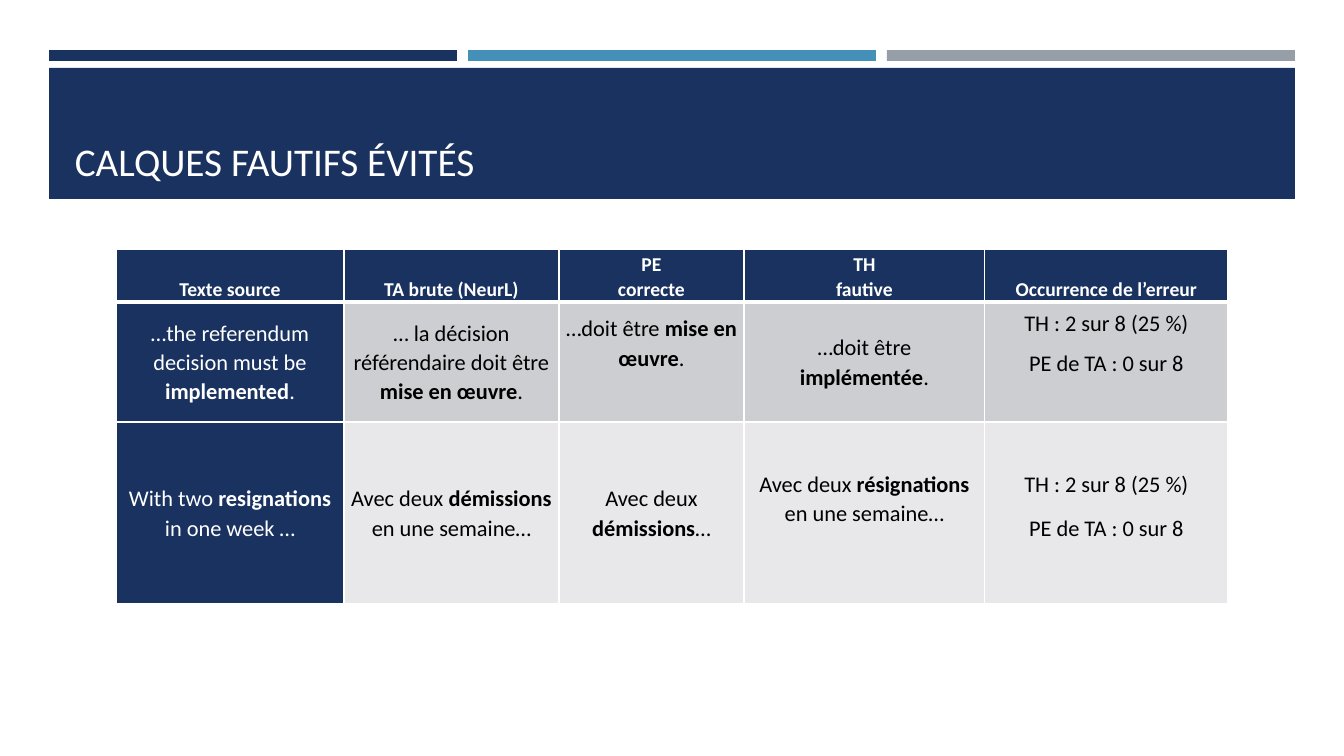
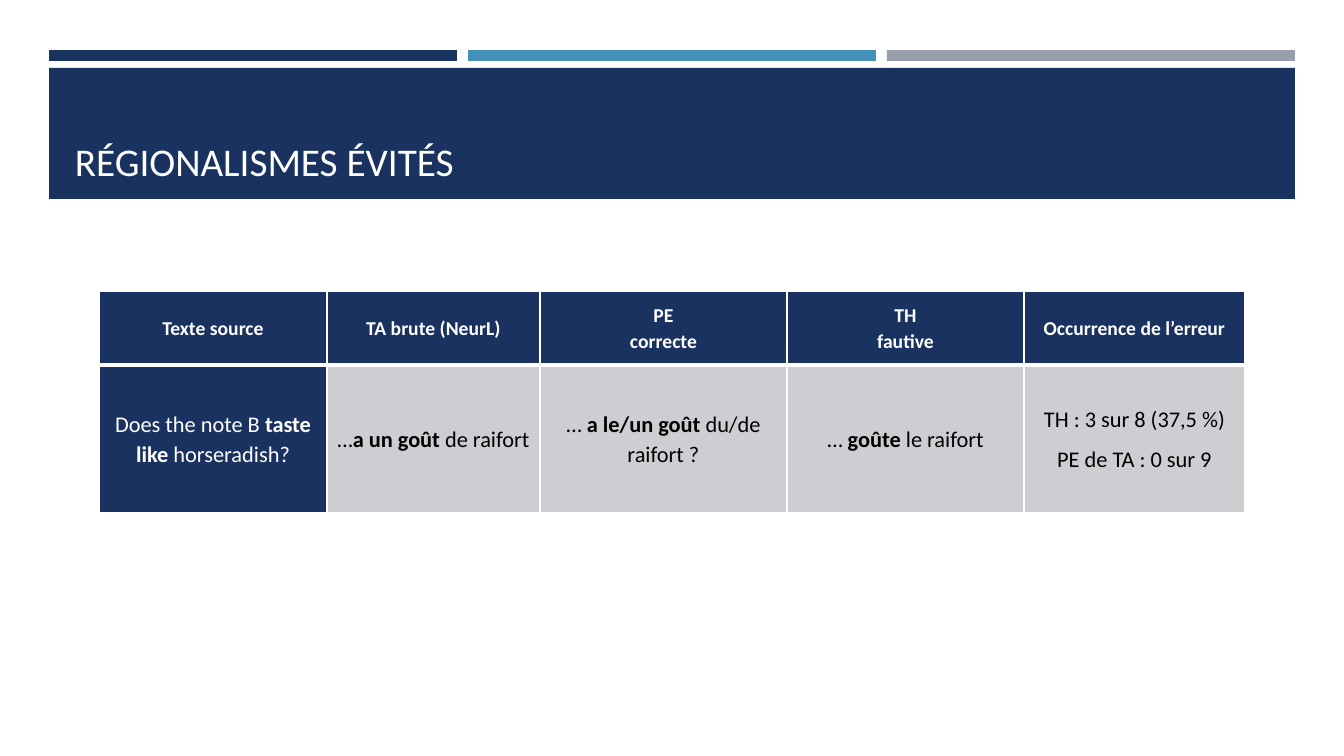
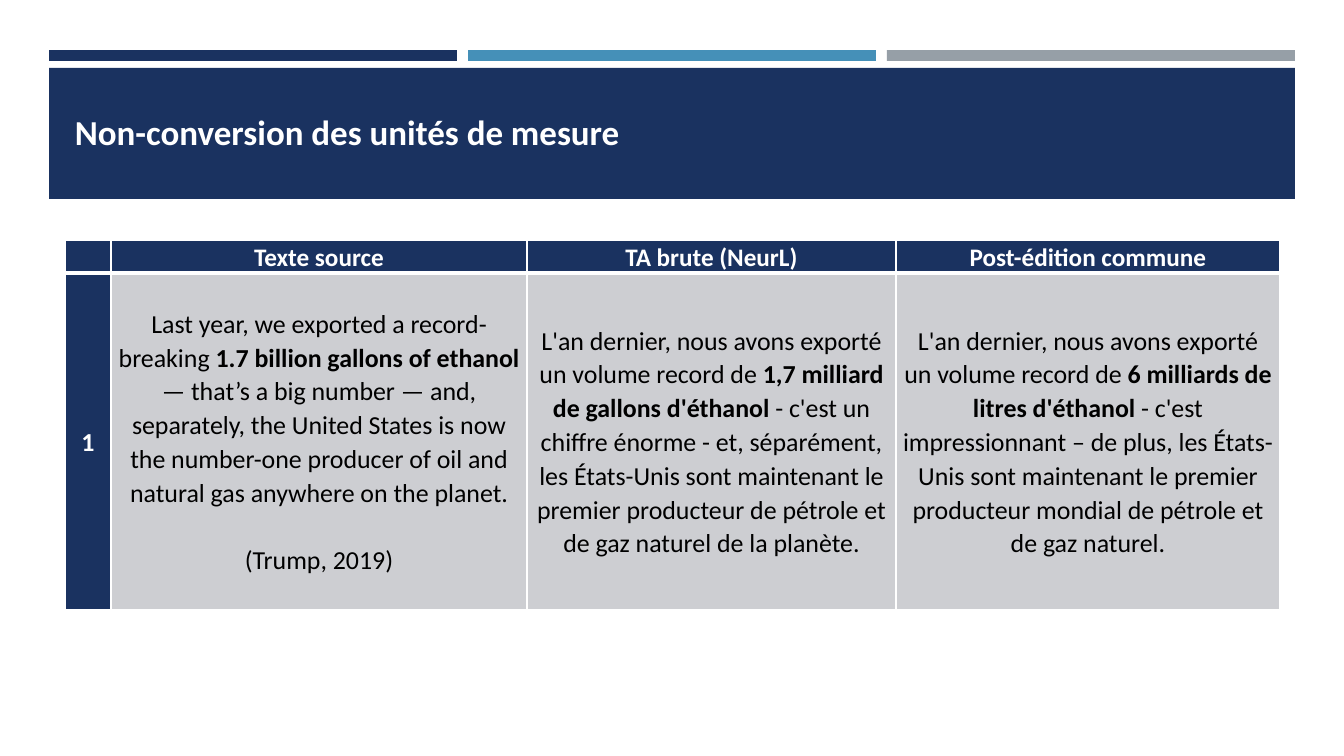
import pptx
import pptx.util
import pptx.dml.color
import pptx.enum.shapes
import pptx.enum.text
import pptx.oxml
import pptx.oxml.ns

RGB = pptx.dml.color.RGBColor
NAVY = RGB(0x1A, 0x32, 0x60)
BLUE = RGB(0x45, 0x90, 0xB8)
GRAY = RGB(0x96, 0x9F, 0xA7)
DARK = RGB(0xCD, 0xCE, 0xD2)
PALE = RGB(0xE8, 0xE8, 0xEA)
WHITE = RGB(0xFF, 0xFF, 0xFF)
BLACK = RGB(0, 0, 0)
FACE = "Calibri"
SCALE = 914400 / 100.8
PT = pptx.util.Pt
ANCHOR = pptx.enum.text.MSO_ANCHOR
ALIGN = pptx.enum.text.PP_ALIGN


def px(size):
    return round(size * SCALE)


def put(item, values):
    for name, value in values.items():
        setattr(item, name, value)


def write(para, text, size, color, bold=False):
    for part, words in enumerate(text.split("*")):
        if words:
            run = para.add_run()
            run.text = words
            put(run.font, {"name": FACE, "size": PT(size), "bold": bold or part % 2 == 1})
            run.font.color.rgb = color


def block(slide, box, color):
    shape = slide.shapes.add_shape(pptx.enum.shapes.MSO_SHAPE.RECTANGLE, *map(px, box))
    shape.shadow.inherit = False
    shape.fill.solid()
    shape.fill.fore_color.rgb = color
    shape.line.fill.background()


def banner(slide, box, title, size, anchor, bold):
    left, top, width, height = box
    gap = 11
    band = (width - 2 * gap) // 3
    for step, color in enumerate((NAVY, BLUE, GRAY)):
        block(slide, (left + step * (band + gap), top, band, 11), color)
    block(slide, (left, top + 18, width, height - 18), NAVY)
    label = slide.shapes.add_textbox(*map(px, (left + 16, top + 28, width - 30, height - 37)))
    put(label.text_frame, {"word_wrap": True, "vertical_anchor": anchor})
    para = label.text_frame.paragraphs[0]
    para.line_spacing = 0.9
    write(para, title, size, WHITE, bold)


def edge(cell, sides):
    props = cell._tc.get_or_add_tcPr()
    for spot, (side, width) in enumerate(sides.items()):
        line = pptx.oxml.parse_xml(
            f'<a:ln{side} {pptx.oxml.ns.nsdecls("a")} w="{PT(width)}">'
            f'<a:solidFill><a:srgbClr val="{WHITE}"/></a:solidFill></a:ln{side}>')
        props.insert(spot, line)


def grid(slide, spot, cols, rows, cells, sizes, gaps, head=ANCHOR.MIDDLE, lifts={}):
    box = (*spot, sum(cols), sum(rows))
    table = slide.shapes.add_table(len(rows), len(cols), *map(px, box)).table
    put(table, {"first_row": False, "horz_banding": False})
    for col, width in zip(table.columns, cols):
        col.width = px(width)
    for row, height in zip(table.rows, rows):
        row.height = px(height)
    for r, line in enumerate(cells):
        for c, text in enumerate(line):
            cell = table.cell(r, c)
            navy = r == 0 or c == 0
            put(cell, {
                "margin_left": px(7), "margin_right": px(7), "margin_top": 0,
                "margin_bottom": px(lifts.get((r, c), 0)),
                "vertical_anchor": head if r == 0 else ANCHOR.MIDDLE})
            cell.fill.solid()
            cell.fill.fore_color.rgb = NAVY if navy else (PALE, DARK)[r % 2]
            edge(cell, {"L": 1, "R": 1, "T": 3 if r == 1 else 1, "B": 3 if r == 0 else 1})
            frame = cell.text_frame
            for p, words in enumerate(text.split("\n")):
                para = frame.add_paragraph() if p else frame.paragraphs[0]
                put(para, {"alignment": ALIGN.CENTER, "line_spacing": 1.07})
                if p:
                    para.space_before = PT(gaps[r])
                write(para, words, sizes[r > 0], WHITE if navy else BLACK, r == 0)


HEADS = ("Texte source", "TA brute (NeurL)", "PE\ncorrecte", "TH\nfautive", "Occurrence de l’erreur")

DECK = (
    (("CALQUES FAUTIFS ÉVITÉS", 28, ANCHOR.BOTTOM, False), {
        "spot": (116, 249), "cols": (228, 215, 185, 241, 243), "rows": (53, 120, 182),
        "sizes": (14, 16), "gaps": (0, 8, 10), "head": ANCHOR.BOTTOM,
        "lifts": {(1, 2): 38, (1, 4): 38, (2, 3): 29, (2, 4): 14},
        "cells": (
            HEADS,
            ("…the referendum decision must be *implemented*.",
             "… la décision référendaire doit être *mise en œuvre*.",
             "…doit être *mise en œuvre*.",
             "…doit être *implémentée*.",
             "TH : 2 sur 8 (25 %)\nPE de TA : 0 sur 8"),
            ("With two *resignations* in one week …",
             "Avec deux *démissions* en une semaine…",
             "Avec deux *démissions*…",
             "Avec deux *résignations* en une semaine…",
             "TH : 2 sur 8 (25 %)\nPE de TA : 0 sur 8"))}),
    (("RÉGIONALISMES ÉVITÉS", 28, ANCHOR.BOTTOM, False), {
        "spot": (99, 291), "cols": (228, 213, 247, 237, 221), "rows": (74, 148),
        "sizes": (14, 16), "gaps": (0, 8),
        "cells": (
            HEADS,
            ("Does the note B *taste like* horseradish?",
             "…*a un goût* de raifort",
             "… *a le/un goût* du/de raifort ?",
             "… *goûte* le raifort",
             "TH : 3 sur 8 (37,5 %)\nPE de TA : 0 sur 9"))}),
    (("Non-conversion des unités de mesure", 25, ANCHOR.MIDDLE, True), {
        "spot": (65, 240), "cols": (46, 416, 369, 384), "rows": (33, 337),
        "sizes": (18, 18.5), "gaps": (0, 24),
        "cells": (
            ("", *HEADS[:2], "Post-édition commune"),
            ("*1*",
             "Last year, we exported a record-breaking *1.7 billion gallons of ethanol* "
             "— that’s a big number — and, separately, the United States is now the "
             "number-one producer of oil and natural gas anywhere on the planet.\n(Trump, 2019)",
             "L'an dernier, nous avons exporté un volume record de *1,7 milliard de gallons "
             "d'éthanol* - c'est un chiffre énorme - et, séparément, les États-Unis sont "
             "maintenant le premier producteur de pétrole et de gaz naturel de la planète.",
             "L'an dernier, nous avons exporté un volume record de *6 milliards de litres "
             "d'éthanol* - c'est impressionnant – de plus, les États-Unis sont maintenant "
             "le premier producteur mondial de pétrole et de gaz naturel."))}),
)


def main():
    deck = pptx.Presentation()
    put(deck, {"slide_width": px(1344), "slide_height": px(756)})
    for title, table in DECK:
        slide = deck.slides.add_slide(deck.slide_layouts[6])
        banner(slide, (49, 50, 1246, 149), *title)
        grid(slide, **table)
    deck.save("out.pptx")


if __name__ == "__main__":
    main()
